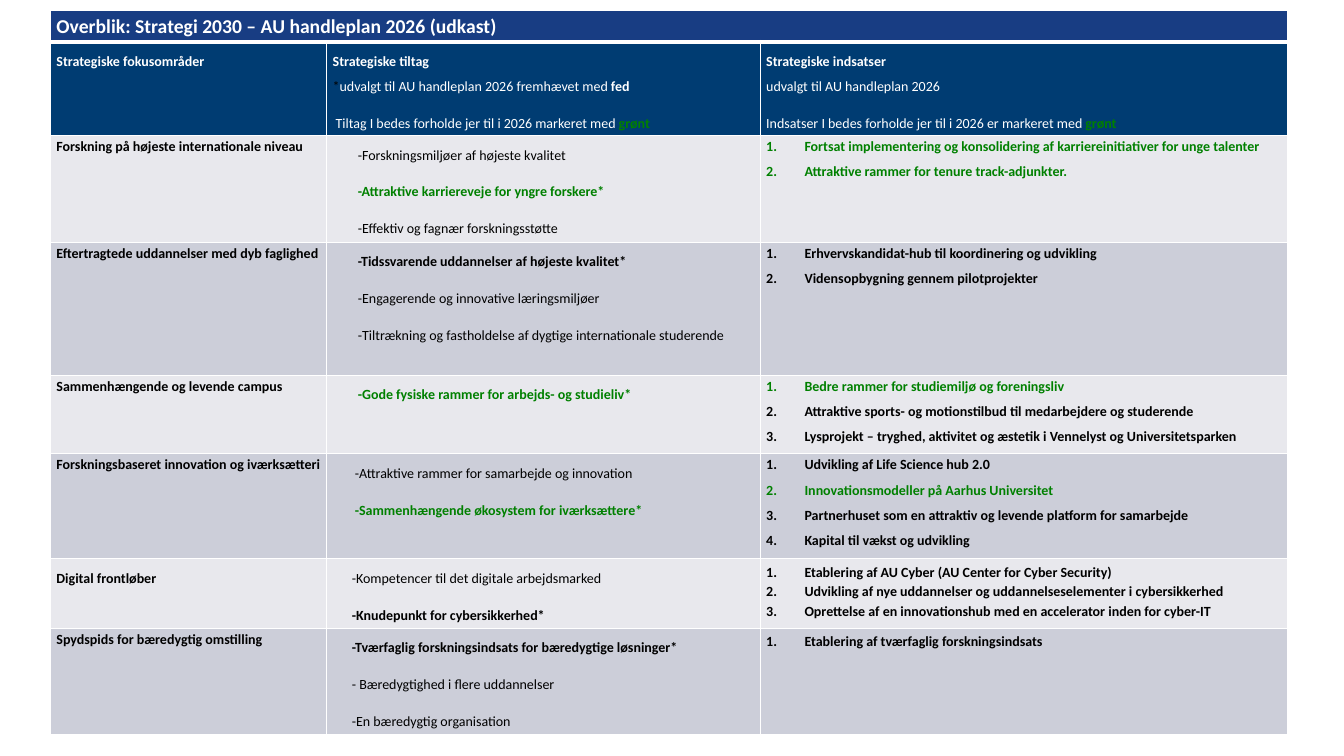
import pptx
import pptx.dml.color
import pptx.enum.text
import pptx.oxml
import pptx.oxml.ns
import pptx.util
from lxml import etree

RGBColor = pptx.dml.color.RGBColor
Inches = pptx.util.Inches
Pt = pptx.util.Pt
qn = pptx.oxml.ns.qn

WHITE = RGBColor(0xFF, 0xFF, 0xFF)
BLACK = RGBColor(0, 0, 0)
GREEN = RGBColor(0, 0x80, 0)
TITLE_BLUE = RGBColor(0x18, 0x3D, 0x83)
HEADER_BLUE = RGBColor(0, 0x3C, 0x72)
BANDS = [RGBColor(0xE8, 0xE8, 0xED), RGBColor(0xCC, 0xCE, 0xD9)]

FONT = "Calibri"
COL_WIDTHS = [2.74, 4.3, 5.23]
ROW_HEIGHTS = [0.27, 0.58, 1.06, 1.32, 0.78, 1.04, 0.69, 1.06]
TITLE = "Overblik: Strategi 2030 – AU handleplan 2026 (udkast)"

# Each header paragraph is a list of lines, each line a list of (text, colour, bold).
HEADERS = [
    [[[("Strategiske fokusområder", WHITE, True)]]],
    [
        [[("Strategiske tiltag", WHITE, True)],
         [("*", BLACK, False),
          ("udvalgt til AU handleplan 2026 fremhævet med ", WHITE, False),
          ("fed", WHITE, True)]],
        [[("Tiltag I bedes forholde jer til i 2026 markeret med ", WHITE, False),
          ("grønt", GREEN, True)]],
    ],
    [
        [[("Strategiske indsatser", WHITE, True)],
         [("udvalgt til AU handleplan 2026", WHITE, False)]],
        [[("Indsatser I bedes forholde jer til i 2026 er markeret med ", WHITE, False),
          ("grønt", GREEN, True)]],
    ],
]

# Focus area, its line spacing, indent of tiltag, tiltag,
# line spacing and space after of indsatser, indsatser.
AREAS = [
    ("Forskning på højeste internationale niveau", Pt(12), 0.25,
     [("-Forskningsmiljøer af højeste kvalitet", BLACK),
      ("-Attraktive karriereveje for yngre forskere*", GREEN),
      ("-Effektiv og fagnær forskningsstøtte", BLACK)],
     Pt(12), 6,
     [("Fortsat implementering og konsolidering af karriereinitiativer for unge talenter",
       GREEN),
      ("Attraktive rammer for tenure track-adjunkter.", GREEN)]),
    ("Eftertragtede uddannelser med dyb faglighed", Pt(12), 0.25,
     [("-Tidssvarende uddannelser af højeste kvalitet*", BLACK),
      ("-Engagerende og innovative læringsmiljøer", BLACK),
      ("-Tiltrækning og fastholdelse af dygtige internationale studerende", BLACK)],
     Pt(12), 6,
     [("Erhvervskandidat-hub til koordinering og udvikling", BLACK),
      ("Vidensopbygning gennem pilotprojekter", BLACK)]),
    ("Sammenhængende og levende campus", Pt(12), 0.25,
     [("-Gode fysiske rammer for arbejds- og studieliv*", GREEN)],
     Pt(12), 6,
     [("Bedre rammer for studiemiljø og foreningsliv", GREEN),
      ("Attraktive sports- og motionstilbud til medarbejdere og studerende", BLACK),
      ("Lysprojekt – tryghed, aktivitet og æstetik i Vennelyst og Universitetsparken",
       BLACK)]),
    ("Forskningsbaseret innovation og iværksætteri", Pt(12), 0.22,
     [("-Attraktive rammer for samarbejde og innovation", BLACK),
      ("-Sammenhængende økosystem for iværksættere*", GREEN)],
     Pt(12), 6,
     [("Udvikling af Life Science hub 2.0", BLACK),
      ("Innovationsmodeller på Aarhus Universitet", GREEN),
      ("Partnerhuset som en attraktiv og levende platform for samarbejde", BLACK),
      ("Kapital til vækst og udvikling", BLACK)]),
    ("Digital frontløber", 1.5, 0.19,
     [("-Kompetencer til det digitale arbejdsmarked", BLACK),
      ("-Knudepunkt for cybersikkerhed*", BLACK)],
     1.15, 0,
     [("Etablering af AU Cyber (AU Center for Cyber Security)", BLACK),
      ("Udvikling af nye uddannelser og uddannelseselementer i cybersikkerhed", BLACK),
      ("Oprettelse af en innovationshub med en accelerator inden for cyber-IT", BLACK)]),
    ("Spydspids for bæredygtig omstilling", Pt(12), 0.19,
     [("-Tværfaglig forskningsindsats for bæredygtige løsninger*", BLACK),
      ("- Bæredygtighed i flere uddannelser", BLACK),
      ("-En bæredygtig organisation", BLACK)],
     1.15, 0,
     [("Etablering af tværfaglig forskningsindsats", BLACK)]),
]


def style_cell(cell, fill, bottom=1):
    """Set fill, margins and white borders; bottom is a width in points."""
    cell.margin_left = cell.margin_right = Inches(0.06)
    cell.margin_top = cell.margin_bottom = Inches(0.03)
    tcPr = cell._tc.get_or_add_tcPr()
    for side, width in (("L", 1), ("R", 1), ("T", 1), ("B", bottom)):
        ln = etree.SubElement(tcPr, qn(f"a:ln{side}"), w=str(Pt(width)))
        solid = etree.SubElement(ln, qn("a:solidFill"))
        etree.SubElement(solid, qn("a:srgbClr"), val=str(WHITE))
    cell.fill.solid()
    cell.fill.fore_color.rgb = fill


def add_paragraph(cell, lines, spacing, after, indent=0, size=10, numbered=False):
    """Fill the cell's empty first paragraph, or add one after it."""
    tf = cell.text_frame
    p = tf.paragraphs[0] if not tf.text else tf.add_paragraph()
    p.line_spacing = spacing
    p.space_after = Pt(after)
    pPr = p._p.get_or_add_pPr()
    pPr.set("marL", str(Inches(indent)))
    pPr.set("indent", str(Inches(-indent if numbered else 0)))
    if numbered:
        etree.SubElement(pPr, qn("a:buAutoNum"), type="arabicPeriod")
    for i, line in enumerate(lines):
        if i:
            p.add_line_break()
            etree.SubElement(p._p[-1], qn("a:rPr"), sz=str(size * 100))
        for text, color, bold in line:
            r = p.add_run()
            r.text = text
            r.font.name = FONT
            r.font.size = Pt(size)
            r.font.bold = bold
            r.font.color.rgb = color
    return p


def fill_title(table):
    for cell in table.rows[0].cells:
        style_cell(cell, TITLE_BLUE, bottom=3)
    title = table.cell(0, 0)
    title.merge(table.cell(0, len(COL_WIDTHS) - 1))
    add_paragraph(title, [[(TITLE, WHITE, True)]], 1.07, 0, size=14)


def fill_headers(table):
    for col, paragraphs in enumerate(HEADERS):
        cell = table.cell(1, col)
        style_cell(cell, HEADER_BLUE)
        for i, lines in enumerate(paragraphs):
            indent = 0.03 if col == 1 and i else 0
            p = add_paragraph(cell, lines, 1.5, 8, indent)
            if col == 0:
                p.alignment = pptx.enum.text.PP_ALIGN.JUSTIFY


def fill_area(cells, fill, area):
    name, name_spacing, indent, tiltag, spacing, after, indsatser = area
    for cell in cells:
        style_cell(cell, fill)
    name_cell, tiltag_cell, indsats_cell = cells
    add_paragraph(name_cell, [[(name, BLACK, True)]], name_spacing, 8)
    for text, color in tiltag:
        chosen = text.endswith("*")
        add_paragraph(tiltag_cell, [[(text, color, chosen)]], 1.5, 8, indent)
    for text, color in indsatser:
        add_paragraph(indsats_cell, [[(text, color, True)]], spacing, after, 0.38,
                      numbered=True)


def add_plan_table(slide, left, top):
    table = slide.shapes.add_table(
        len(ROW_HEIGHTS), len(COL_WIDTHS), Inches(left), Inches(top),
        Inches(sum(COL_WIDTHS)), Inches(sum(ROW_HEIGHTS))).table
    table.first_row = table.horz_banding = False
    for column, width in zip(table.columns, COL_WIDTHS):
        column.width = Inches(width)
    for row, height in zip(table.rows, ROW_HEIGHTS):
        row.height = Inches(height)
    fill_title(table)
    fill_headers(table)
    for i, area in enumerate(AREAS):
        fill_area(list(table.rows[i + 2].cells), BANDS[i % 2], area)


def main():
    prs = pptx.Presentation()
    prs.slide_width = Inches(13.33)
    prs.slide_height = Inches(7.5)
    slide = prs.slides.add_slide(prs.slide_layouts[6])
    add_plan_table(slide, 0.5, 0.1)
    prs.save("out.pptx")


if __name__ == "__main__":
    main()
